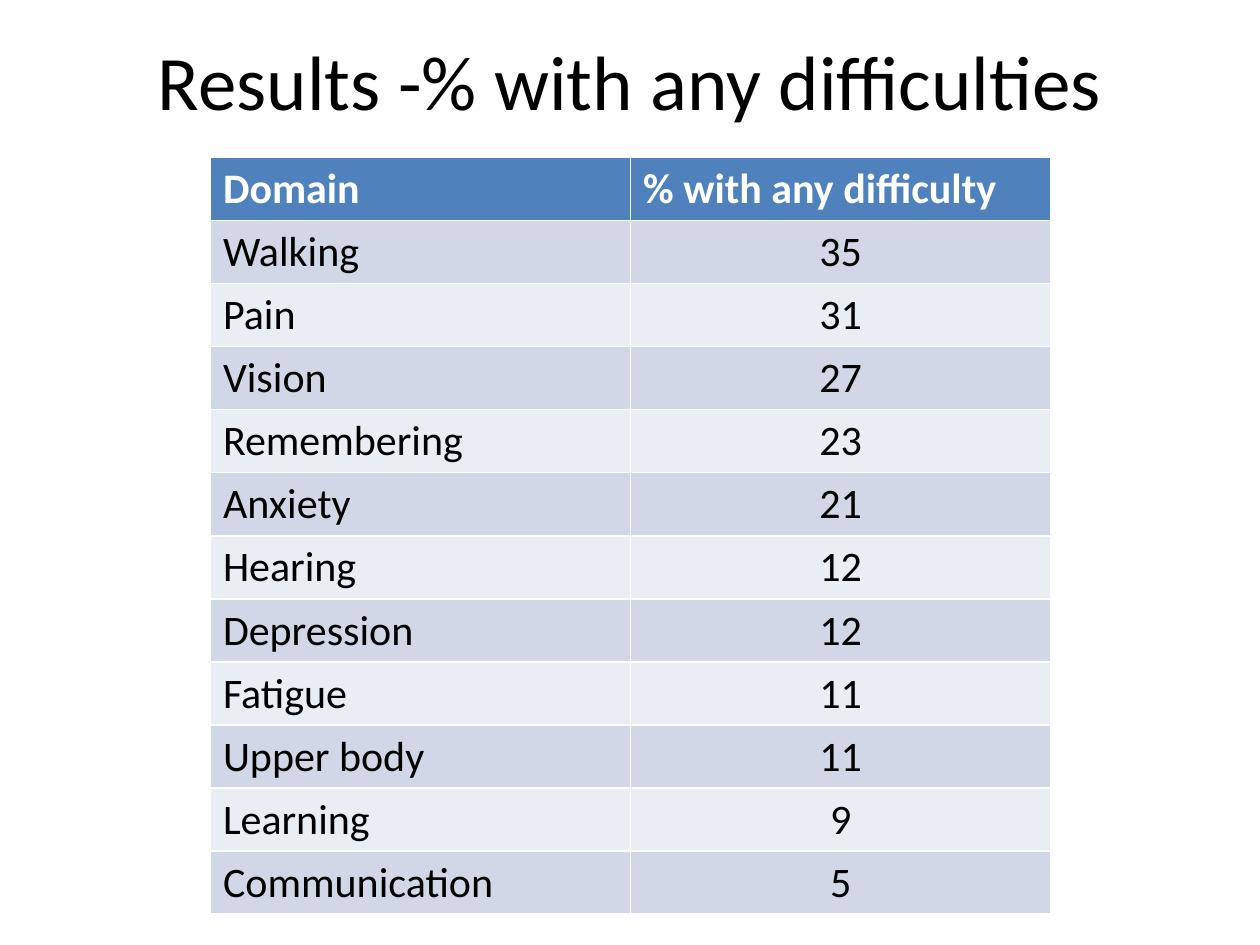
from dataclasses import dataclass

from pptx import Presentation
from pptx.dml.color import RGBColor
from pptx.enum.text import MSO_ANCHOR, PP_ALIGN
from pptx.util import Inches, Pt

LEFT, MID = PP_ALIGN.LEFT, PP_ALIGN.CENTER
MIDDLE = MSO_ANCHOR.MIDDLE
FONT = "Calibri"
HUES = {
    "text": "000000",
    "head": "4F81BD",
    "label": "FFFFFF",
    "dark": "D0D8E8",
    "light": "E9EDF4",
}


@dataclass
class Domain:
    name: str
    rate: int


DOMAINS = [
    Domain("Walking", 35),
    Domain("Pain", 31),
    Domain("Vision", 27),
    Domain("Remembering", 23),
    Domain("Anxiety", 21),
    Domain("Hearing", 12),
    Domain("Depression", 12),
    Domain("Fatigue", 11),
    Domain("Upper body", 11),
    Domain("Learning", 9),
    Domain("Communication", 5),
]


def write(frame, text: str, size: int, hue: str, align, bold: bool = False) -> None:
    para = frame.paragraphs[0]
    para.alignment = align
    run = para.add_run()
    run.text = text
    run.font.name = FONT
    run.font.size = Pt(size)
    run.font.bold = bold
    run.font.color.rgb = RGBColor.from_string(HUES[hue])


def fill_cell(cell, text: str, fill: str, hue: str, align, bold: bool = False) -> None:
    cell.fill.solid()
    cell.fill.fore_color.rgb = RGBColor.from_string(HUES[fill])
    write(cell.text_frame, text, 24, hue, align, bold)


def add_title(slide, text: str) -> None:
    box = slide.shapes.add_textbox(Inches(0.5), Inches(0.17), Inches(9), Inches(0.92))
    frame = box.text_frame
    frame.word_wrap = True
    frame.vertical_anchor = MIDDLE
    write(frame, text, 44, "text", MID)


def add_grid(slide, heads: list[str], domains: list[Domain]) -> None:
    high = Inches(6)
    holder = slide.shapes.add_table(
        len(domains) + 1, len(heads), Inches(1.67), Inches(1.25), Inches(6.67), high
    )
    table = holder.table
    for row in table.rows:
        row.height = Inches(0.41)
    holder.height = high
    for col, head in enumerate(heads):
        fill_cell(table.cell(0, col), head, "head", "label", LEFT, True)
    for row, domain in enumerate(domains, 1):
        fill = "dark" if row % 2 else "light"
        fill_cell(table.cell(row, 0), domain.name, fill, "text", LEFT)
        fill_cell(table.cell(row, 1), str(domain.rate), fill, "text", MID)


def main() -> None:
    deck = Presentation()
    deck.slide_width, deck.slide_height = Inches(10), Inches(7.5)
    slide = deck.slides.add_slide(deck.slide_layouts[6])
    add_title(slide, "Results -% with any difficulties")
    add_grid(slide, ["Domain", "% with any difficulty"], DOMAINS)
    deck.save("out.pptx")


if __name__ == "__main__":
    main()
